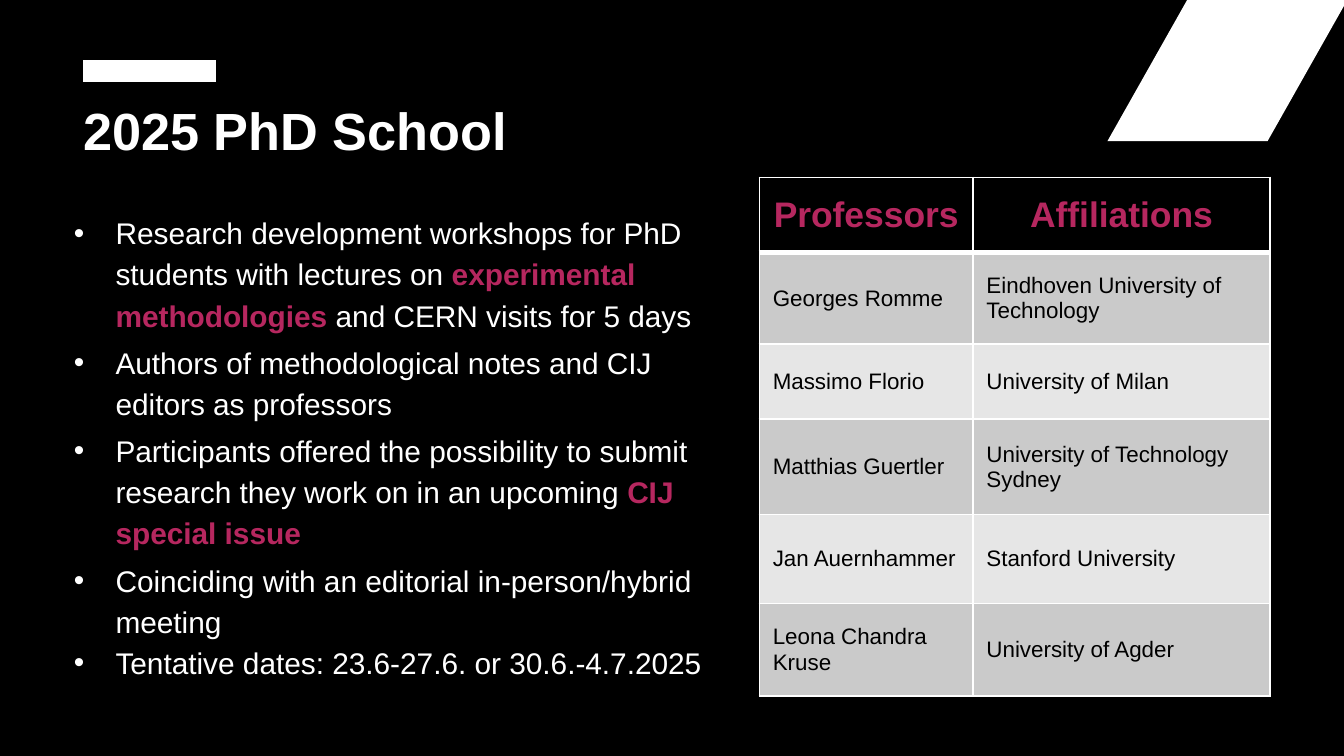
import typing

import lxml.etree
import pptx
import pptx.dml.color
import pptx.enum.shapes
import pptx.enum.text
import pptx.oxml
import pptx.oxml.ns
import pptx.util

Inches = pptx.util.Inches
Pt = pptx.util.Pt
RGBColor = pptx.dml.color.RGBColor
Align = pptx.enum.text.PP_ALIGN
Anchor = pptx.enum.text.MSO_ANCHOR
qn = pptx.oxml.ns.qn

BLACK = RGBColor(0x00, 0x00, 0x00)
WHITE = RGBColor(0xFF, 0xFF, 0xFF)
MAGENTA = RGBColor(0xB6, 0x27, 0x5F)
GRAY = RGBColor(0xCA, 0xCA, 0xCA)
LIGHT_GRAY = RGBColor(0xE6, 0xE6, 0xE6)

TITLE = {"name": "Arial", "size": Pt(28), "bold": True}
BODY = {"name": "Arial", "size": Pt(16), "bold": False}
STRONG = {**BODY, "bold": True}
HEADER = {"name": "Arial", "size": Pt(19), "bold": True}
CELL = {"name": "Arial", "size": Pt(12), "bold": False}


class Bullet(typing.NamedTuple):
    start: str
    strong: str = ""
    end: str = ""
    before: float = 3.2


class Professor(typing.NamedTuple):
    name: str
    affiliation: str
    height: float


BULLETS = [
    Bullet("Research development workshops for PhD students with lectures on ",
           "experimental methodologies", " and CERN visits for 5 days"),
    Bullet("Authors of methodological notes and CIJ editors as professors"),
    Bullet("Participants offered the possibility to submit research they work on in an upcoming ",
           "CIJ special issue"),
    Bullet("Coinciding with an editorial in-person/hybrid meeting"),
    Bullet("Tentative dates: 23.6-27.6. or 30.6.-4.7.2025", before=0),
]
ROWS = [
    Professor("Professors", "Affiliations", 0.56),
    Professor("Georges Romme", "Eindhoven University of Technology", 0.68),
    Professor("Massimo Florio", "University of Milan", 0.56),
    Professor("Matthias Guertler", "University of Technology Sydney", 0.71),
    Professor("Jan Auernhammer", "Stanford University", 0.66),
    Professor("Leona Chandra Kruse", "University of Agder", 0.69),
]
COLUMNS = [1.59, 2.21]


def set_all(obj: typing.Any, values: dict) -> None:
    for key, value in values.items():
        setattr(obj, key, value)


def place(sp: typing.Any, left: float, top: float, width: float, height: float) -> None:
    set_all(sp, {"left": Inches(left), "top": Inches(top),
                 "width": Inches(width), "height": Inches(height)})


def add_run(p: typing.Any, text: str, font: dict, color: RGBColor) -> None:
    r = p.add_run()
    r.text = text
    set_all(r.font, font)
    r.font.color.rgb = color


def add_decoration(s: typing.Any) -> None:
    sp = s.shapes.add_shape(pptx.enum.shapes.MSO_SHAPE.PARALLELOGRAM,
                            Inches(8.24), Inches(-0.01), Inches(1.79), Inches(1.06))
    sp.adjustments[0] = 0.565
    sp.shadow.inherit = False
    sp.fill.solid()
    sp.fill.fore_color.rgb = WHITE
    sp.line.fill.background()
    bar = s.shapes.add_connector(pptx.enum.shapes.MSO_CONNECTOR.STRAIGHT,
                                 Inches(0.62), Inches(0.53), Inches(1.61), Inches(0.53))
    bar.line.color.rgb = WHITE
    bar.line.width = Pt(12)
    lxml.etree.SubElement(bar._element.spPr, qn("a:effectLst"))


def fill_title(sp: typing.Any) -> None:
    place(sp, 0.62, 0.77, 5.11, 0.55)
    tf = sp.text_frame
    set_all(tf, {"margin_left": 0, "vertical_anchor": Anchor.TOP, "word_wrap": True,
                 "auto_size": pptx.enum.text.MSO_AUTO_SIZE.NONE})
    p = tf.paragraphs[0]
    set_all(p, {"alignment": Align.LEFT, "line_spacing": 0.8})
    add_run(p, "2025 PhD School", TITLE, WHITE)


def add_marker(p: typing.Any) -> None:
    pPr = p._p.get_or_add_pPr()
    pPr.set("marL", str(Inches(0.31)))
    pPr.set("indent", str(-Inches(0.31)))
    color = lxml.etree.SubElement(pPr, qn("a:buClr"))
    lxml.etree.SubElement(color, qn("a:srgbClr"), val=str(WHITE))
    lxml.etree.SubElement(pPr, qn("a:buFont"), typeface="Arial")
    lxml.etree.SubElement(pPr, qn("a:buChar"), char="•")


def fill_body(sp: typing.Any) -> None:
    place(sp, 0.45, 1.51, 4.89, 3.68)
    tf = sp.text_frame
    set_all(tf, {"vertical_anchor": Anchor.TOP, "word_wrap": True,
                 "auto_size": pptx.enum.text.MSO_AUTO_SIZE.NONE})
    for i, bullet in enumerate(BULLETS):
        p = tf.add_paragraph() if i else tf.paragraphs[0]
        set_all(p, {"alignment": Align.LEFT, "line_spacing": 1.15,
                    "space_before": Pt(bullet.before), "space_after": Pt(0)})
        add_marker(p)
        add_run(p, bullet.start, BODY, WHITE)
        if bullet.strong:
            add_run(p, bullet.strong, STRONG, MAGENTA)
        if bullet.end:
            add_run(p, bullet.end, BODY, WHITE)


def set_borders(cell: typing.Any, widths: dict[str, float]) -> None:
    tcPr = cell._tc.get_or_add_tcPr()
    for i, (side, width) in enumerate(widths.items()):
        ln = pptx.oxml.parse_xml(
            f'<a:ln{side} {pptx.oxml.ns.nsdecls("a")} w="{Pt(width)}">'
            f'<a:solidFill><a:srgbClr val="{WHITE}"/></a:solidFill></a:ln{side}>')
        tcPr.insert(i, ln)


def add_professors(s: typing.Any) -> None:
    height = sum(row.height for row in ROWS)
    table = s.shapes.add_table(len(ROWS), len(COLUMNS), Inches(5.65), Inches(1.32),
                               Inches(sum(COLUMNS)), Inches(height)).table
    for column, width in zip(table.columns, COLUMNS):
        column.width = Inches(width)
    for i, row in enumerate(ROWS):
        table.rows[i].height = Inches(row.height)
        header = i == 0
        fill = BLACK if header else GRAY if i % 2 else LIGHT_GRAY
        for j, text in enumerate((row.name, row.affiliation)):
            cell = table.cell(i, j)
            cell.vertical_anchor = Anchor.MIDDLE
            cell.fill.solid()
            cell.fill.fore_color.rgb = fill
            set_borders(cell, {"L": 1, "R": 1, "T": 3 if i == 1 else 1, "B": 3 if header else 1})
            p = cell.text_frame.paragraphs[0]
            p.alignment = Align.CENTER if header else Align.LEFT
            add_run(p, text, HEADER if header else CELL, MAGENTA if header else BLACK)


def main() -> None:
    prs = pptx.Presentation()
    set_all(prs, {"slide_width": Inches(10), "slide_height": Inches(10 * 9 / 16)})
    s = prs.slides.add_slide(prs.slide_layouts[1])
    s.background.fill.solid()
    s.background.fill.fore_color.rgb = BLACK
    add_decoration(s)
    fill_title(s.shapes.title)
    fill_body(s.placeholders[1])
    add_professors(s)
    prs.save("out.pptx")


if __name__ == "__main__":
    main()
